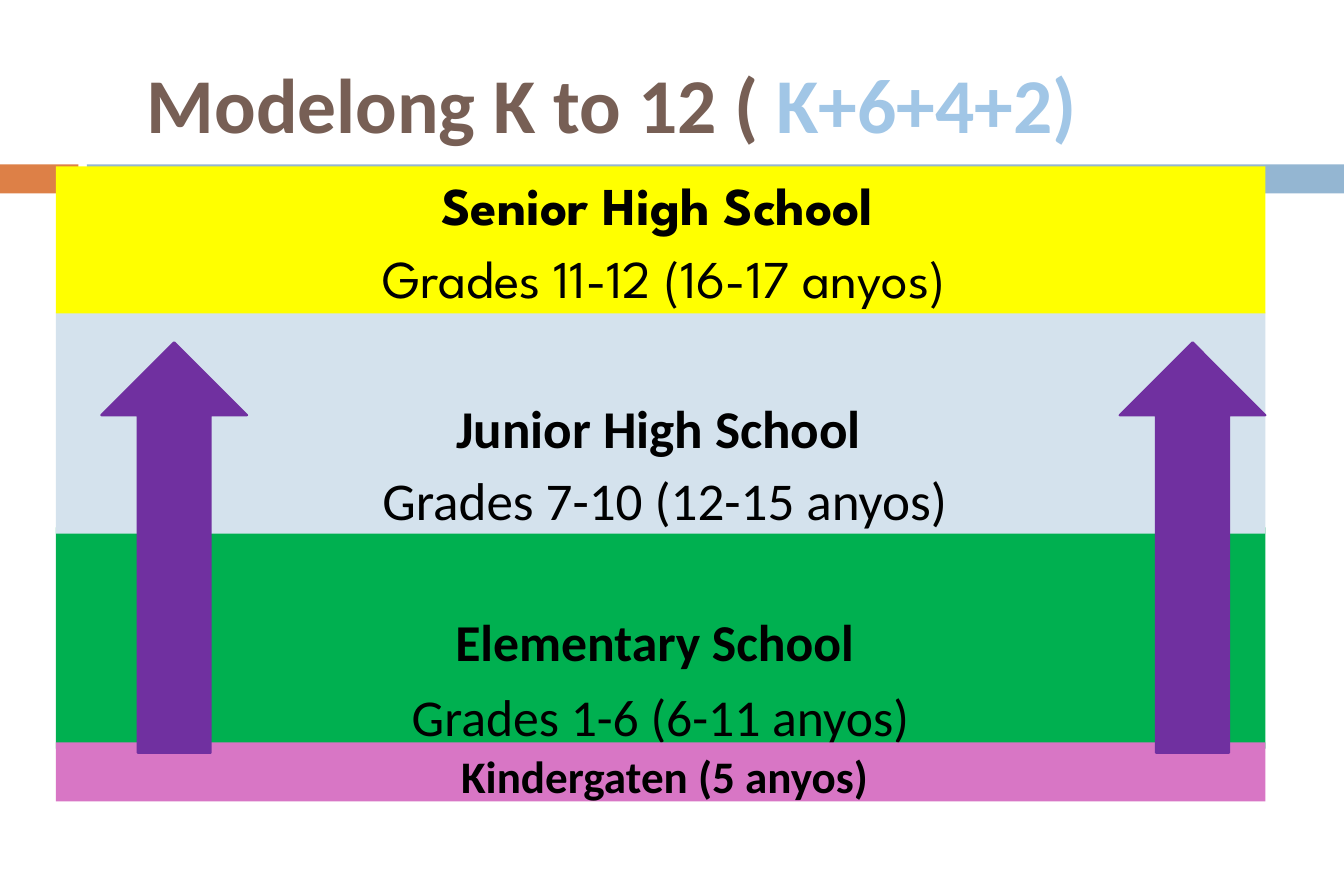
from dataclasses import dataclass
from pptx import Presentation
from pptx.dml.color import RGBColor
from pptx.enum.shapes import MSO_SHAPE
from pptx.enum.text import MSO_ANCHOR, PP_ALIGN
from pptx.util import Inches, Pt

RECTANGLE = MSO_SHAPE.RECTANGLE
RIGHT_ARROW = MSO_SHAPE.RIGHT_ARROW
TOP, MIDDLE = MSO_ANCHOR.TOP, MSO_ANCHOR.MIDDLE
LEFT, CENTER = PP_ALIGN.LEFT, PP_ALIGN.CENTER


@dataclass(frozen=True)
class Theme:
    body_font: str = "Calibri"
    display_font: str = "League Spartan"
    title: str = "775F55"
    title_accent: str = "A1C6E6"
    text: str = "000000"
    orange: str = "DD8047"
    blue: str = "94B6D2"
    senior: str = "FFFF00"
    junior: str = "D4E2ED"
    elementary: str = "00B050"
    kindergarten: str = "D876C5"
    arrow: str = "7030A0"
    title_size: float = 54
    level_size: float = 37
    elementary_size: float = 36
    kindergarten_size: float = 31.4


class SlideBuilder:
    def __init__(self, page, theme):
        self.page = page
        self.theme = theme

    def block(self, kind, left, top, width, height, color):
        shape = self.page.shapes.add_shape(
            kind, Inches(left), Inches(top), Inches(width), Inches(height))
        shape.shadow.inherit = False
        shape.fill.solid()
        shape.fill.fore_color.rgb = RGBColor.from_string(color)
        shape.line.fill.background()
        return shape

    def frame(self, shape, anchor, top_inset=0.06):
        frame = shape.text_frame
        frame.word_wrap = True
        frame.vertical_anchor = anchor
        frame.margin_left = frame.margin_right = Inches(0.12)
        frame.margin_top, frame.margin_bottom = Inches(top_inset), Inches(0.06)
        return frame

    def paragraph(self, para, align, margin, indent):
        para.alignment = align
        properties = para._p.get_or_add_pPr()
        properties.set("marL", str(Inches(margin)))
        properties.set("indent", str(Inches(indent)))

    def span(self, para, text, font, size, color, bold):
        span = para.add_run()
        span.text = text
        span.font.name = font
        span.font.size = Pt(size)
        span.font.bold = bold
        span.font.color.rgb = RGBColor.from_string(color)

    def title(self, spans):
        box = self.page.shapes.add_textbox(
            Inches(0.65), Inches(0.38), Inches(11.7), Inches(1.23))
        para = self.frame(box, MIDDLE).paragraphs[0]
        self.paragraph(para, LEFT, 0.65, 0)
        for text, color in spans:
            self.span(para, text, self.theme.body_font,
                      self.theme.title_size, color, True)

    def level(self, top, height, color, lines, font, size,
              margin, indent, top_inset=0.06, gap=6):
        band = self.block(RECTANGLE, 0.54, top, 11.7, height, color)
        frame = self.frame(band, TOP, top_inset)
        for index, text in enumerate(lines):
            para = frame.add_paragraph() if index else frame.paragraphs[0]
            self.paragraph(para, CENTER, margin, indent)
            if index:
                para.space_before = Pt(gap)
            self.span(para, text, font, size, self.theme.text, index == 0)

    def up_arrow(self, left):
        arrow = self.block(RIGHT_ARROW, left, 4.59, 3.97, 1.41, self.theme.arrow)
        arrow.rotation = 270
        arrow.line.color.rgb = RGBColor.from_string(self.theme.arrow)
        arrow.line.width = Pt(1.5)


def main():
    deck = Presentation()
    deck.slide_width, deck.slide_height = Inches(13), Inches(8.5)
    theme = Theme()
    slide = SlideBuilder(deck.slides.add_slide(deck.slide_layouts[6]), theme)

    slide.block(RECTANGLE, 0, 1.59, 0.76, 0.28, theme.orange)
    slide.block(RECTANGLE, 0.84, 1.59, 12.16, 0.28, theme.blue)
    slide.title([("Modelong K to 12 ( ", theme.title),
                 ("K+6+4+2)", theme.title_accent)])

    slide.level(5.1, 2.14, theme.elementary,
                ["Elementary School ", "Grades 1-6 (6-11 anyos)"],
                theme.body_font, theme.elementary_size, 0.43, -0.43, 0.8, 8.6)
    slide.level(3.02, 2.14, theme.junior,
                ["Junior High School ", "Grades 7-10 (12-15 anyos)"],
                theme.body_font, theme.level_size, 0.6, -0.52, 0.8)
    slide.level(1.61, 1.42, theme.senior,
                ["Senior High School ", "Grades 11-12 (16-17 anyos)"],
                theme.display_font, theme.level_size, 0.49, -0.42)
    slide.level(7.18, 0.57, theme.kindergarten, ["Kindergaten (5 anyos)"],
                theme.body_font, theme.kindergarten_size, 0.6, -0.52)

    for left in (9.55, -0.3):
        slide.up_arrow(left)

    deck.save("out.pptx")


if __name__ == "__main__":
    main()
